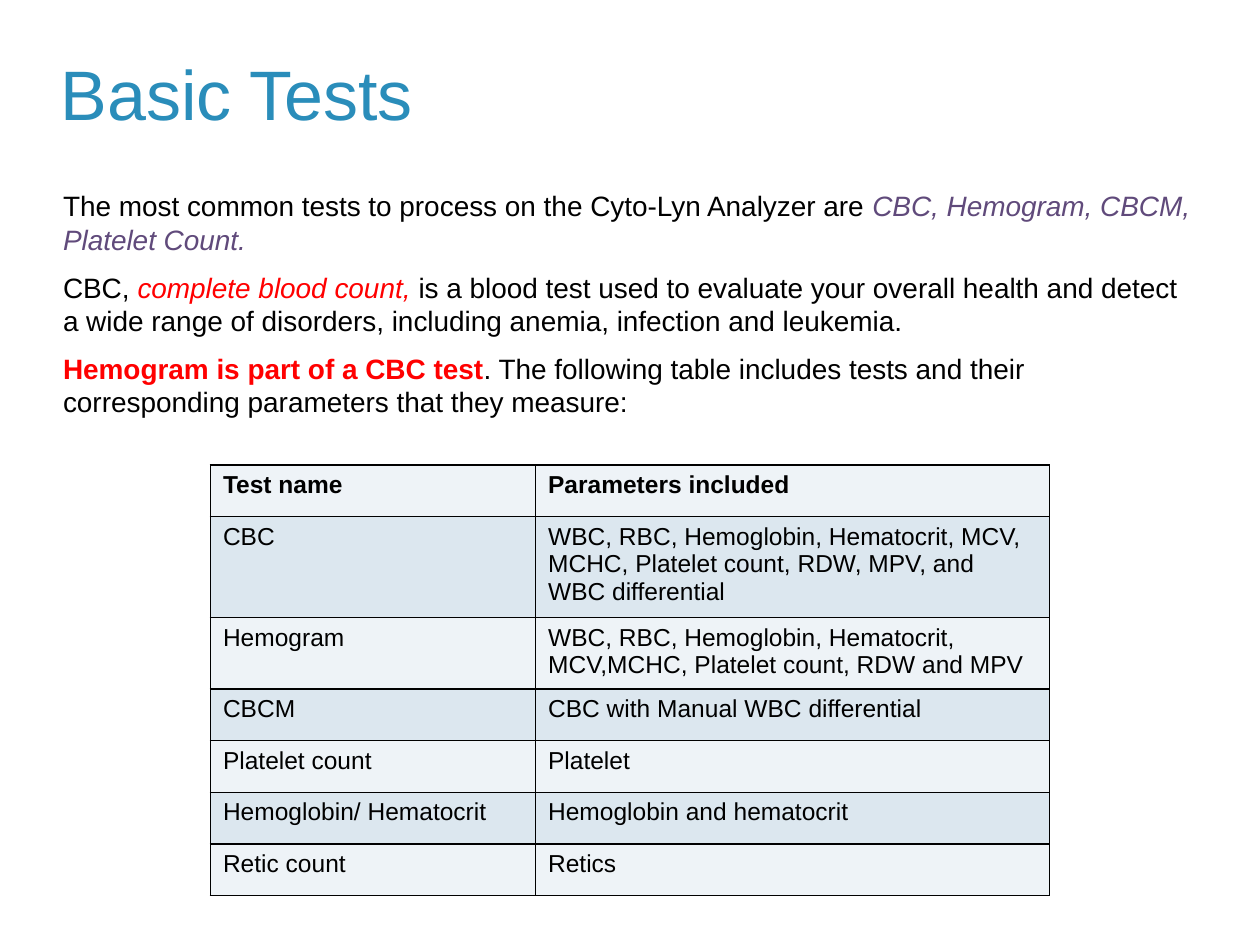
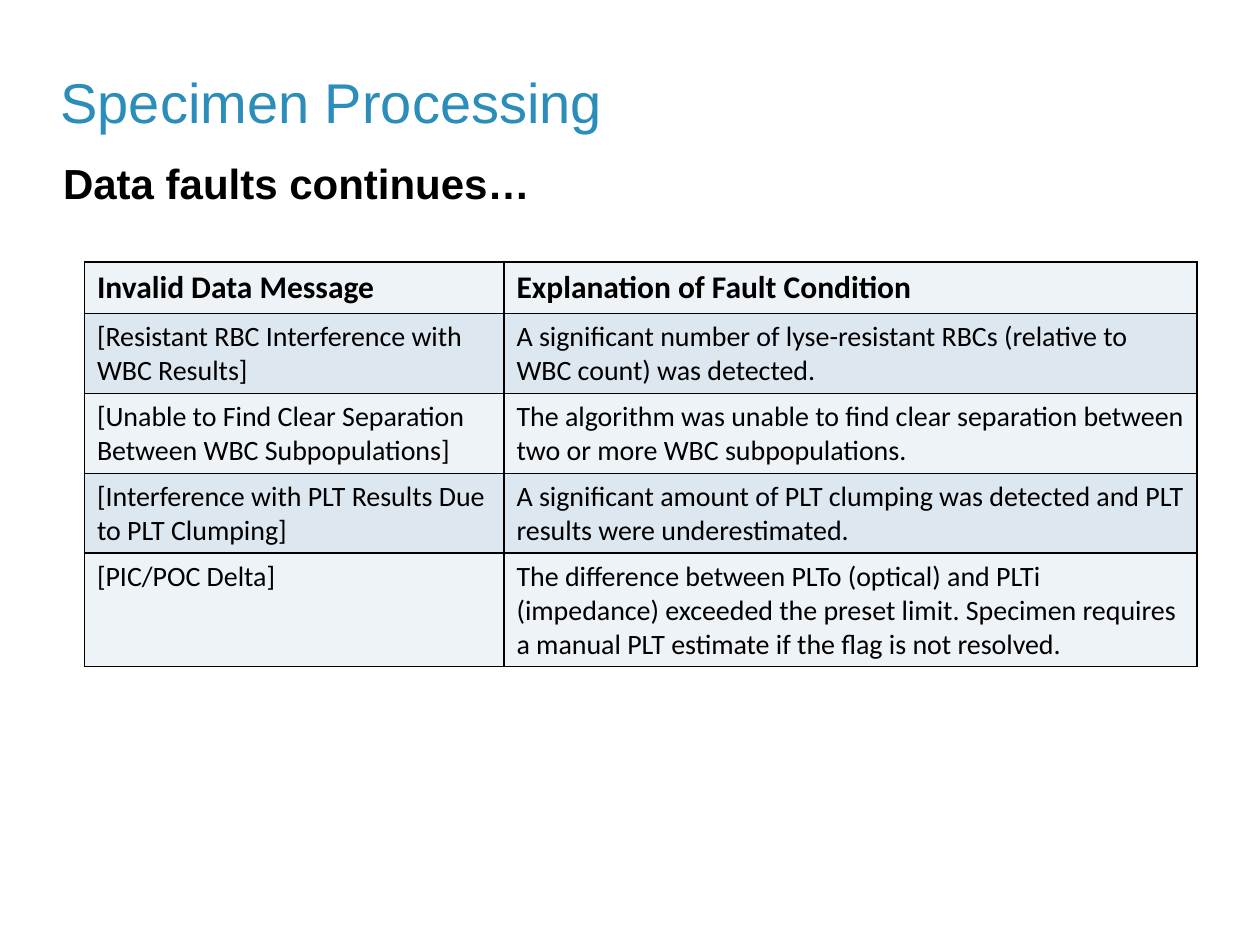
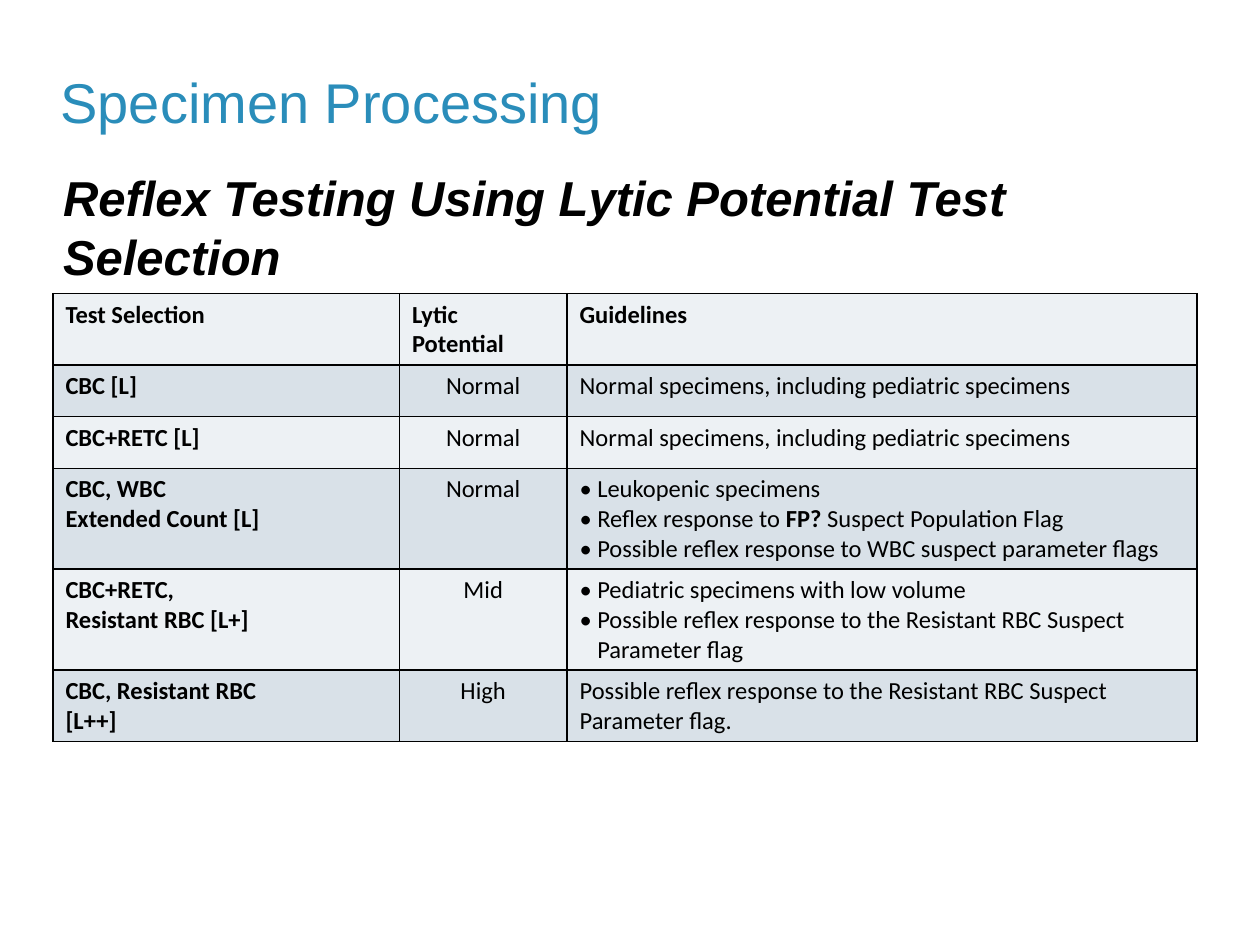
from lxml.etree import SubElement
from pptx import Presentation
from pptx.dml.color import RGBColor
from pptx.enum.text import MSO_ANCHOR, PP_ALIGN
from pptx.oxml.ns import qn
from pptx.util import Inches, Pt

TITLE_BLUE = RGBColor(0x2A, 0x8D, 0xBA)
BLACK = RGBColor(0x00, 0x00, 0x00)
RED = RGBColor(0xFF, 0x00, 0x00)
PURPLE = RGBColor(0x60, 0x4A, 0x7B)
BLUE_BANDS = (RGBColor(0xEE, 0xF3, 0xF7), RGBColor(0xDC, 0xE7, 0xEF))
GREY_BANDS = (RGBColor(0xED, 0xF1, 0xF4), RGBColor(0xD9, 0xE1, 0xE8))

ROW_HEIGHT = 0.41
BULLET_INDENT = 0.14
BODY_BOTTOM = 6.83

TEST_ROWS = [
    ("Test name", "Parameters included"),
    ("CBC", "WBC, RBC, Hemoglobin, Hematocrit, MCV, MCHC, Platelet count, "
            "RDW, MPV, and WBC differential"),
    ("Hemogram", "WBC, RBC, Hemoglobin, Hematocrit, MCV,MCHC, Platelet count, "
                 "RDW and MPV"),
    ("CBCM", "CBC with Manual WBC differential"),
    ("Platelet count", "Platelet"),
    ("Hemoglobin/ Hematocrit", "Hemoglobin and hematocrit"),
    ("Retic count", "Retics"),
]

FAULT_ROWS = [
    ("Invalid Data Message", "Explanation of Fault Condition"),
    ("[Resistant RBC Interference with WBC Results]",
     "A significant number of lyse-resistant RBCs (relative to WBC count) was detected."),
    ("[Unable to Find Clear Separation Between WBC Subpopulations]",
     "The algorithm was unable to find clear separation between two or more "
     "WBC subpopulations."),
    ("[Interference with PLT Results Due to PLT Clumping]",
     "A significant amount of PLT clumping was detected and PLT results were "
     "underestimated."),
    ("[PIC/POC Delta]",
     "The difference between PLTo (optical) and PLTi (impedance) exceeded the preset "
     "limit. Specimen requires a manual PLT estimate if the flag is not resolved."),
]

REFLEX_ROWS = [
    ("Test Selection", "Lytic\nPotential", "Guidelines"),
    ("CBC [L]", "Normal", "Normal specimens, including pediatric specimens"),
    ("CBC+RETC [L]", "Normal", "Normal specimens, including pediatric specimens"),
    ("CBC, WBC\nExtended Count [L]", "Normal", [
        "Leukopenic specimens",
        [("Reflex response to ", {}), ("FP? ", {"bold": True}),
         ("Suspect Population Flag", {})],
        "Possible reflex response to WBC suspect parameter flags"]),
    ("CBC+RETC,\nResistant RBC [L+]", "Mid", [
        "Pediatric specimens with low volume",
        "Possible reflex response to the Resistant RBC Suspect Parameter flag"]),
    ("CBC, Resistant RBC\n[L++]", "High",
     "Possible reflex response to the Resistant RBC Suspect Parameter flag."),
]


def write_paragraph(p, content, size, font="Arial", color=BLACK, bold=False, italic=False):
    """Write plain text or (text, style) runs, each style overriding the defaults."""
    runs = [(content, {})] if isinstance(content, str) else content
    for text, style in runs:
        r = p.add_run()
        r.text = text
        r.font.name = font
        r.font.size = Pt(size)
        r.font.bold = style.get("bold", bold)
        r.font.italic = style.get("italic", italic)
        r.font.color.rgb = style.get("color", color)


def write_paragraphs(tf, contents, size, **style):
    """Fill a text frame with paragraphs and return them."""
    for i, content in enumerate(contents):
        p = tf.paragraphs[0] if i == 0 else tf.add_paragraph()
        write_paragraph(p, content, size, **style)
    return tf.paragraphs


def add_text(slide, box, contents, size, **style):
    """Add a wrapping text box without margins and return its frame."""
    tf = slide.shapes.add_textbox(*map(Inches, box)).text_frame
    tf.word_wrap = True
    tf.margin_left = tf.margin_right = tf.margin_top = tf.margin_bottom = 0
    write_paragraphs(tf, contents, size, **style)
    return tf


def add_title(slide, text, size):
    """Add the blue slide title."""
    tf = add_text(slide, (0.48, 0.07, 9.02, 1.01), [text], size, color=TITLE_BLUE)
    tf.vertical_anchor = MSO_ANCHOR.BOTTOM
    tf.paragraphs[0].line_spacing = 0.9


def add_body(slide, top, contents, size, **style):
    """Add the body text with half a line of space after each paragraph."""
    tf = add_text(slide, (0.5, top, 9.01, BODY_BOTTOM - top), contents, size, **style)
    for p in tf.paragraphs:
        p.space_after = Pt(size / 2)


def set_borders(cell):
    """Draw a thin black line on all four sides of a cell."""
    tc_pr = cell._tc.get_or_add_tcPr()
    for side in ("a:lnL", "a:lnR", "a:lnT", "a:lnB"):
        ln = SubElement(tc_pr, qn(side), w=str(Pt(1)))
        fill = SubElement(ln, qn("a:solidFill"))
        SubElement(fill, qn("a:srgbClr"), val=str(BLACK))


def set_bullet(p):
    """Give a paragraph a round bullet with a hanging indent."""
    p_pr = p._p.get_or_add_pPr()
    p_pr.set("marL", str(Inches(BULLET_INDENT)))
    p_pr.set("indent", str(-Inches(BULLET_INDENT)))
    SubElement(p_pr, qn("a:buFont"), typeface="Calibri")
    SubElement(p_pr, qn("a:buChar"), char="•")


def add_banded_table(slide, left, top, widths, rows, size, font="Calibri",
                     header_size=None, bands=BLUE_BANDS, bold_cols=(), center_cols=()):
    """Add a bordered table with a bold header; a list in a cell becomes bullets."""
    box = (left, top, sum(widths), ROW_HEIGHT * len(rows))
    table = slide.shapes.add_table(len(rows), len(widths), *map(Inches, box)).table
    table.horz_banding = False
    for column, width in zip(table.columns, widths):
        column.width = Inches(width)
    for i, row in enumerate(rows):
        table.rows[i].height = Inches(ROW_HEIGHT)
        header = i == 0
        for j, content in enumerate(row):
            cell = table.cell(i, j)
            set_borders(cell)
            cell.fill.solid()
            cell.fill.fore_color.rgb = bands[i % 2]
            bulleted = isinstance(content, list)
            contents = content if bulleted else content.split("\n")
            paragraphs = write_paragraphs(
                cell.text_frame, contents, header_size if header and header_size else size,
                font=font, bold=header or j in bold_cols)
            for p in paragraphs:
                if bulleted:
                    set_bullet(p)
                if j in center_cols and not header:
                    p.alignment = PP_ALIGN.CENTER


def build_basic_tests(slide):
    """Build the slide on the common tests and their parameters."""
    add_title(slide, "Basic Tests", 40)
    add_body(slide, 1.5, [
        [("The most common tests to process on the Cyto-Lyn Analyzer are ", {}),
         ("CBC, Hemogram, CBCM, Platelet Count.", {"color": PURPLE, "italic": True})],
        [("CBC, ", {}),
         ("complete blood count, ", {"color": RED, "italic": True}),
         ("is a blood test used to evaluate your overall health and detect a wide range "
          "of disorders, including anemia, infection and leukemia.", {})],
        [("Hemogram is part of a CBC test", {"color": RED, "bold": True}),
         (". The following table includes tests and their corresponding parameters "
          "that they measure:", {})],
    ], 16)
    add_banded_table(slide, 1.67, 3.69, (2.58, 4.08), TEST_ROWS, 14, font="Arial")


def build_data_faults(slide):
    """Build the slide on invalid data messages."""
    add_title(slide, "Specimen Processing", 32)
    add_body(slide, 1.25, ["Data faults continues…"], 24, bold=True)
    add_banded_table(slide, 0.67, 2.08, (3.33, 5.5), FAULT_ROWS, 16, header_size=18)


def build_reflex_testing(slide):
    """Build the slide on choosing a test by lytic potential."""
    add_title(slide, "Specimen Processing", 32)
    add_body(slide, 1.33, ["Reflex Testing Using Lytic Potential Test Selection"], 28,
             bold=True, italic=True)
    add_banded_table(slide, 0.42, 2.33, (2.75, 1.33, 5), REFLEX_ROWS, 14,
                     bands=GREY_BANDS, bold_cols=(0,), center_cols=(1,))


def main():
    """Build the presentation and save it."""
    prs = Presentation()
    prs.slide_width, prs.slide_height = Inches(10), Inches(7.5)
    for build in (build_basic_tests, build_data_faults, build_reflex_testing):
        build(prs.slides.add_slide(prs.slide_layouts[6]))
    prs.save("out.pptx")


if __name__ == "__main__":
    main()
